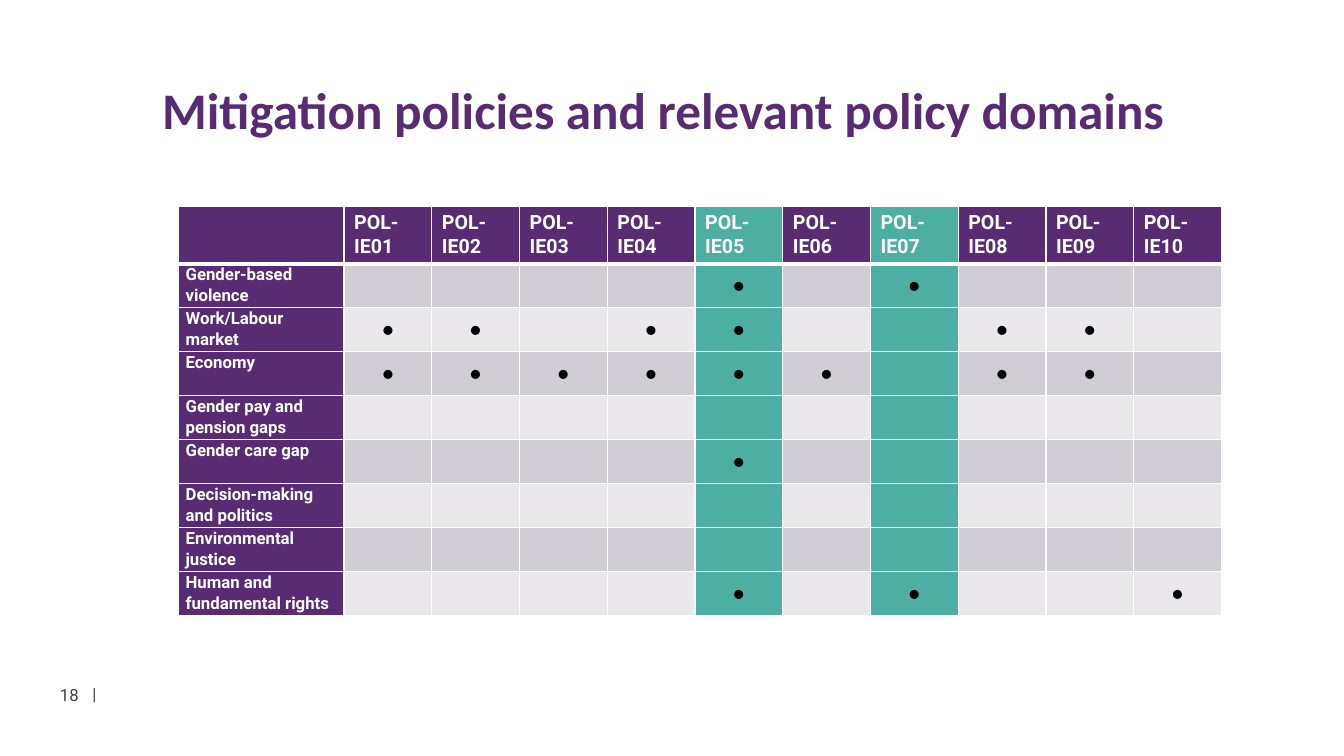
from dataclasses import dataclass

from lxml.etree import SubElement
from pptx import Presentation
from pptx.dml.color import RGBColor
from pptx.enum.text import MSO_ANCHOR, PP_ALIGN
from pptx.oxml.ns import qn
from pptx.slide import Slide
from pptx.table import _Cell
from pptx.util import Pt

PURPLE = RGBColor(0x58, 0x2B, 0x73)
TEAL = RGBColor(0x4D, 0xAF, 0xA1)
DARK_BAND = RGBColor(0xD1, 0xCD, 0xD5)
LIGHT_BAND = RGBColor(0xEA, 0xE8, 0xEB)
GREY = RGBColor(0x3F, 0x3F, 0x3F)
WHITE = RGBColor(0xFF, 0xFF, 0xFF)
BLACK = RGBColor(0, 0, 0)

POLICY_COUNT = 10
HIGHLIGHTED = {5, 7}
LABEL_WIDTH, POLICY_WIDTH = 118.2, 62.7
HEADER_HEIGHT, DOMAIN_HEIGHT = 40.7, 31.45


@dataclass(frozen=True)
class Style:
    font: str
    size: float
    color: RGBColor
    bold: bool = False
    align: PP_ALIGN = PP_ALIGN.LEFT
    anchor: MSO_ANCHOR = MSO_ANCHOR.TOP
    line_spacing: float = 1.0


@dataclass(frozen=True)
class Label:
    text: str
    left: float
    top: float
    width: float
    height: float
    style: Style
    wrap: bool = True


@dataclass(frozen=True)
class Domain:
    name: str
    policies: tuple[int, ...] = ()


TITLE = Style("Calibri", 36.6, PURPLE, bold=True, anchor=MSO_ANCHOR.MIDDLE, line_spacing=0.9)
PAGE_NUMBER = Style("Roboto", 12, GREY, align=PP_ALIGN.RIGHT, anchor=MSO_ANCHOR.MIDDLE)
SEPARATOR = Style("Roboto", 12, GREY)
HEADER = Style("Roboto", 14, WHITE, bold=True)
DOMAIN = Style("Roboto", 12, WHITE, bold=True, line_spacing=1.07)
DOT = Style("Calibri", 14, BLACK, align=PP_ALIGN.CENTER, anchor=MSO_ANCHOR.MIDDLE)

LABELS = [
    Label("Mitigation policies and relevant policy domains", 108.7, 28.1, 802, 105.8, TITLE),
    Label("18", 25.2, 483.8, 38.2, 24.5, PAGE_NUMBER),
    Label("|", 59, 484.6, 17.3, 21.6, SEPARATOR, wrap=False),
]

DOMAINS = [
    Domain("Gender-based violence", (5, 7)),
    Domain("Work/Labour market", (1, 2, 4, 5, 8, 9)),
    Domain("Economy", (1, 2, 3, 4, 5, 6, 8, 9)),
    Domain("Gender pay and pension gaps"),
    Domain("Gender care gap", (5,)),
    Domain("Decision-making and politics"),
    Domain("Environmental justice"),
    Domain("Human and fundamental rights", (5, 7, 10)),
]


def write(p, text: str, style: Style) -> None:
    p.add_run().text = text
    p.alignment = style.align
    p.line_spacing = style.line_spacing
    p.font.name = style.font
    p.font.size = Pt(style.size)
    p.font.bold = style.bold
    p.font.color.rgb = style.color


def add_label(s: Slide, label: Label) -> None:
    box = s.shapes.add_textbox(
        Pt(label.left), Pt(label.top), Pt(label.width), Pt(label.height))
    tf = box.text_frame
    tf.word_wrap = label.wrap
    tf.vertical_anchor = label.style.anchor
    write(tf.paragraphs[0], label.text, label.style)


def set_borders(cell: _Cell, top: float, bottom: float) -> None:
    """Draw white borders; the sides are always 1 pt wide."""
    tc_pr = cell._tc.get_or_add_tcPr()
    widths = {"a:lnL": 1, "a:lnR": 1, "a:lnT": top, "a:lnB": bottom}
    for i, (tag, width) in enumerate(widths.items()):
        line = SubElement(tc_pr, qn(tag), w=str(Pt(width)))
        fill = SubElement(line, qn("a:solidFill"))
        SubElement(fill, qn("a:srgbClr"), val=str(WHITE))
        tc_pr.insert(i, line)


def fill_cell(cell: _Cell, row: int, color: RGBColor, text: str, style: Style) -> None:
    cell.fill.solid()
    cell.fill.fore_color.rgb = color
    set_borders(cell, top=3 if row == 1 else 1, bottom=3 if row == 0 else 1)
    if text:
        cell.vertical_anchor = style.anchor
        write(cell.text_frame.paragraphs[0], text, style)


def add_policy_table(s: Slide) -> None:
    table = s.shapes.add_table(
        len(DOMAINS) + 1, POLICY_COUNT + 1, Pt(127.6), Pt(147.6),
        Pt(LABEL_WIDTH + POLICY_COUNT * POLICY_WIDTH),
        Pt(HEADER_HEIGHT + len(DOMAINS) * DOMAIN_HEIGHT)).table
    table.first_row = table.horz_banding = False
    for i, column in enumerate(table.columns):
        column.width = Pt(POLICY_WIDTH if i else LABEL_WIDTH)
    for i, row in enumerate(table.rows):
        row.height = Pt(DOMAIN_HEIGHT if i else HEADER_HEIGHT)

    fill_cell(table.cell(0, 0), 0, PURPLE, "", HEADER)
    for policy in range(1, POLICY_COUNT + 1):
        color = TEAL if policy in HIGHLIGHTED else PURPLE
        fill_cell(table.cell(0, policy), 0, color, f"POL-IE{policy:02}", HEADER)

    for row, domain in enumerate(DOMAINS, start=1):
        cell = table.cell(row, 0)
        cell.margin_left = cell.margin_right = Pt(5)
        cell.margin_top = cell.margin_bottom = Pt(0)
        fill_cell(cell, row, PURPLE, domain.name, DOMAIN)
        cell.text_frame.paragraphs[0].space_after = Pt(8)
        band = DARK_BAND if row % 2 else LIGHT_BAND
        for policy in range(1, POLICY_COUNT + 1):
            color = TEAL if policy in HIGHLIGHTED else band
            dot = "●" if policy in domain.policies else ""
            fill_cell(table.cell(row, policy), row, color, dot, DOT)


def main() -> None:
    prs = Presentation()
    prs.slide_width, prs.slide_height = Pt(960), Pt(540)
    s = prs.slides.add_slide(prs.slide_layouts[6])
    for label in LABELS:
        add_label(s, label)
    add_policy_table(s)
    prs.save("out.pptx")


if __name__ == "__main__":
    main()
